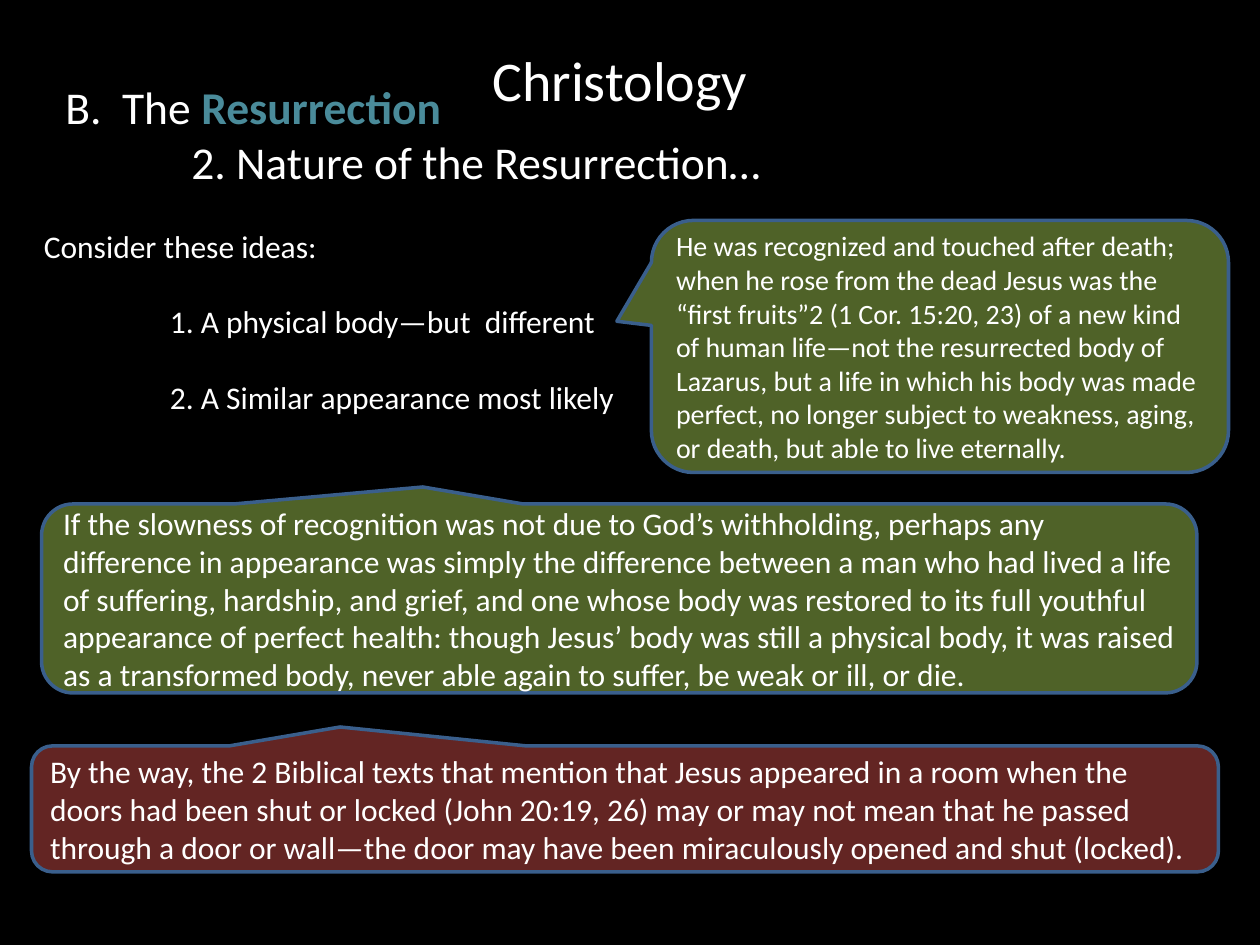
from pptx import Presentation
from pptx.dml.color import RGBColor
from pptx.enum.shapes import MSO_SHAPE
from pptx.enum.text import MSO_ANCHOR, PP_ALIGN
from pptx.util import Inches, Pt

COLORS = {
    "background": "000000",
    "text": "FFFFFF",
    "accent": "4A8B9A",
    "green": "4F6228",
    "red": "632523",
    "outline": "3A5F8C",
}


def color(name):
    return RGBColor.from_string(COLORS[name])


class SlideBuilder:
    """Holds the text style and the current slide."""

    font_name = "Calibri"

    def __init__(self, presentation):
        self.slide = presentation.slides.add_slide(presentation.slide_layouts[5])
        background = self.slide.background.fill
        background.solid()
        background.fore_color.rgb = color("background")

    def add_run(self, paragraph, text, size, color_name="text", bold=False):
        run = paragraph.add_run()
        run.text = text
        font_format = {"name": self.font_name, "size": Pt(size), "bold": bold}
        for attribute, value in font_format.items():
            setattr(run.font, attribute, value)
        run.font.color.rgb = color(color_name)

    def fill_text(self, shape, lines, size, alignment=PP_ALIGN.LEFT,
                  anchor=MSO_ANCHOR.TOP, gap=0):
        """Each line is (indent in inches, [(text, *run style), ...])."""
        frame = shape.text_frame
        frame.word_wrap = True
        frame.vertical_anchor = anchor
        for number, (indent, runs) in enumerate(lines):
            paragraph = frame.add_paragraph() if number else frame.paragraphs[0]
            paragraph_format = {
                "alignment": alignment,
                "space_before": Pt(gap if number else 0),
            }
            for attribute, value in paragraph_format.items():
                setattr(paragraph, attribute, value)
            if indent:
                properties = paragraph._p.get_or_add_pPr()
                properties.set("marL", str(Inches(indent)))
            for text, *style in runs:
                self.add_run(paragraph, text, size, *style)

    def title(self, text, box, size):
        shape = self.slide.shapes.title
        for attribute, value in zip(("left", "top", "width", "height"), box):
            setattr(shape, attribute, Inches(value))
        self.fill_text(shape, [(0, [(text,)])], size,
                       PP_ALIGN.CENTER, MSO_ANCHOR.MIDDLE)

    def text_box(self, lines, box, size, gap=0):
        shape = self.slide.shapes.add_textbox(*map(Inches, box))
        self.fill_text(shape, lines, size, gap=gap)

    def callout(self, text, box, size, fill, pointer):
        shape = self.slide.shapes.add_shape(
            MSO_SHAPE.ROUNDED_RECTANGULAR_CALLOUT, *map(Inches, box))
        shape.shadow.inherit = False
        shape.fill.solid()
        shape.fill.fore_color.rgb = color(fill)
        shape.line.color.rgb = color("outline")
        shape.line.width = Pt(2)
        for index, value in enumerate(pointer):
            shape.adjustments[index] = value
        self.fill_text(shape, [(0, [(text,)])], size, anchor=MSO_ANCHOR.MIDDLE)


def main():
    presentation = Presentation()
    presentation.slide_width = Inches(10)
    presentation.slide_height = Inches(7.5)
    builder = SlideBuilder(presentation)

    # Title and section heading
    builder.title("Christology", (0.67, 0, 8.5, 1.25), 32)
    builder.text_box([
        (0, [("B.  The ",), ("Resurrection", "accent", True)]),
        (1, [("2. Nature of the Resurrection…",)]),
    ], (0.42, 0.58, 9.08, 0.98), 26)

    # Callout on the physical body
    builder.callout(
        "He was recognized and touched after death; when he rose from the dead "
        "Jesus was the “first fruits”2 (1 Cor. 15:20, 23) of a new kind of human "
        "life—not the resurrected body of Lazarus, but a life in which his body "
        "was made perfect, no longer subject to weakness, aging, or death, but "
        "able to live eternally.",
        (5.17, 1.75, 4.58, 2), 16, "green", (-0.56, -0.1))

    # Ideas, one blank line's height apart
    builder.text_box([
        (0, [("Consider these ideas:",)]),
        (1, [("1. A physical body—but  different",)]),
        (1, [("2. A Similar appearance most likely",)]),
    ], (0.25, 1.75, 7, 1.92), 18, gap=21.6)

    # Callout on the appearance
    builder.callout(
        "If the slowness of recognition was not due to God’s withholding, perhaps "
        "any difference in appearance was simply the difference between a man who "
        "had lived a life of suffering, hardship, and grief, and one whose body "
        "was restored to its full youthful appearance of perfect health: though "
        "Jesus’ body was still a physical body, it was raised as a transformed "
        "body, never able again to suffer, be weak or ill, or die.",
        (0.33, 4, 9.17, 1.5), 18, "green", (-0.17, -0.59))

    # Closing remark
    builder.callout(
        "By the way, the 2 Biblical texts that mention that Jesus appeared in a "
        "room when the doors had been shut or locked (John 20:19, 26) may or may "
        "not mean that he passed through a door or wall—the door may have been "
        "miraculously opened and shut (locked).",
        (0.25, 5.92, 9.42, 1), 18, "red", (-0.24, -0.65))

    presentation.save("out.pptx")


if __name__ == "__main__":
    main()
